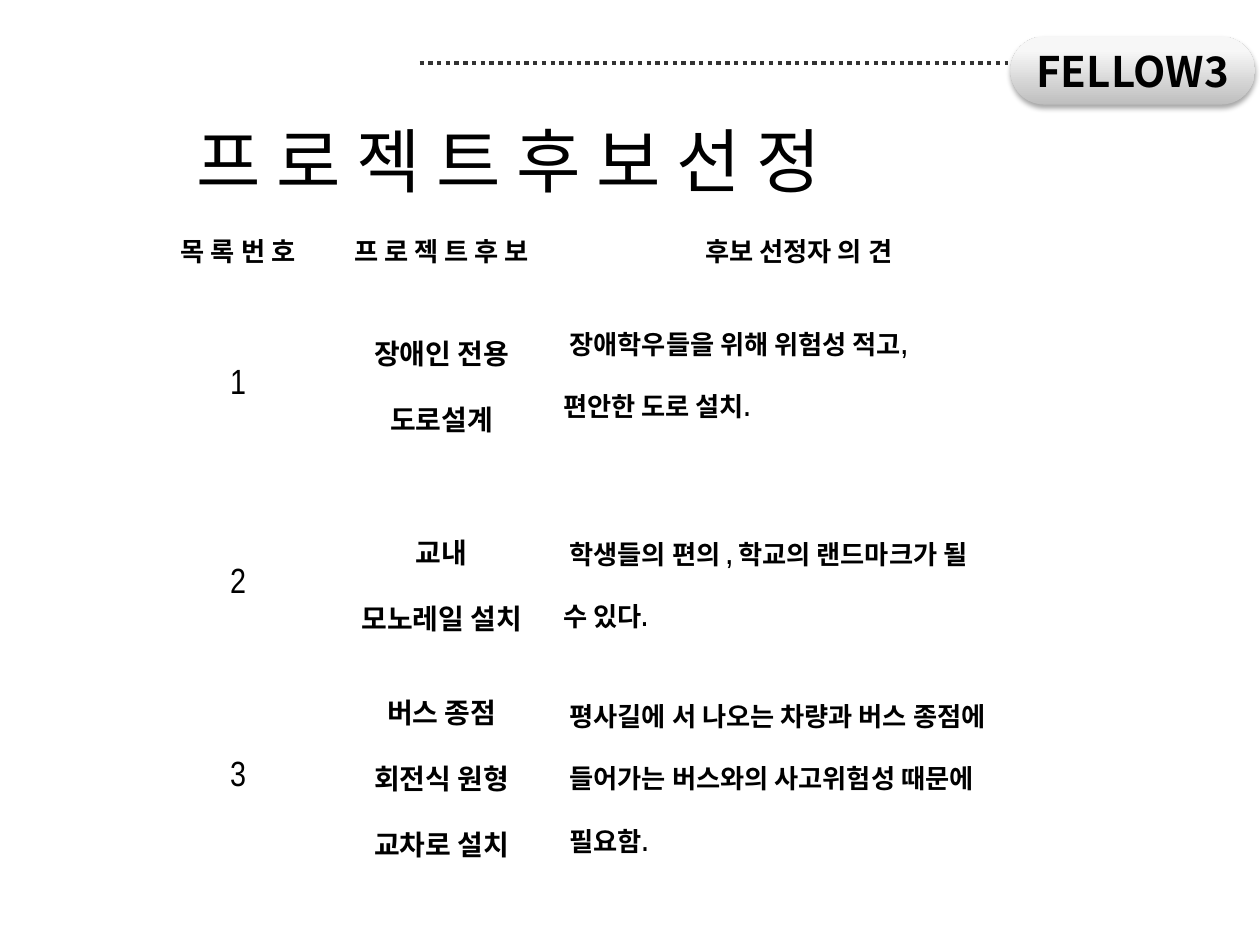
"""Build the project candidate selection slide with its table of reasons."""
from dataclasses import dataclass

from lxml import etree
from pptx import Presentation
from pptx.dml.color import RGBColor
from pptx.enum.dml import MSO_LINE
from pptx.enum.shapes import MSO_CONNECTOR, MSO_SHAPE
from pptx.enum.text import MSO_ANCHOR, PP_ALIGN
from pptx.oxml import parse_xml
from pptx.oxml.ns import nsdecls, qn
from pptx.util import Inches, Pt


@dataclass(frozen=True)
class Theme:
    black: RGBColor = RGBColor(0x00, 0x00, 0x00)
    dots: RGBColor = RGBColor(0x33, 0x33, 0x33)
    badge_low: RGBColor = RGBColor(0xBE, 0xBE, 0xBE)
    badge_high: RGBColor = RGBColor(0xF7, 0xF7, 0xF7)
    korean: str = "Noto Sans CJK KR"
    narrow: str = "Arial Narrow"
    title: int = 40
    badge: int = 24
    number: int = 20
    candidate: int = 16
    reason: int = 15


T = Theme()


def write(tf, lines, size, font, bold=False, align=PP_ALIGN.LEFT, gap=0):
    """Fill a text frame with equally spaced, equally styled paragraphs."""
    tf.text = "\n".join(lines)
    for i, p in enumerate(tf.paragraphs):
        p.alignment = align
        if i:
            p.space_before = Pt(gap)
        for r in p.runs:
            r.font.size, r.font.name, r.font.bold = Pt(size), font, bold
            r.font.color.rgb = T.black
            ea = etree.SubElement(r._r.get_or_add_rPr(), qn("a:ea"))
            ea.set("typeface", T.korean)


prs = Presentation()
prs.slide_width, prs.slide_height = Inches(10), Inches(7.5)
s = prs.slides.add_slide(prs.slide_layouts[6])

title = s.shapes.add_textbox(Inches(1.46), Inches(0.91), Inches(6.54), Inches(0.71))
title.text_frame.word_wrap = True
title.text_frame.vertical_anchor = MSO_ANCHOR.MIDDLE
write(title.text_frame, ["프 로 젝 트 후 보 선 정"], T.title, T.korean)

rule = s.shapes.add_connector(
    MSO_CONNECTOR.STRAIGHT, Inches(3.33), Inches(0.5), Inches(8), Inches(0.5))
rule.line.color.rgb = T.dots
rule.line.width = Pt(2.5)
rule.line.dash_style = MSO_LINE.ROUND_DOT
etree.SubElement(rule._element.spPr, qn("a:effectLst"))

header = ["목 록 번 호", "프 로 젝 트 후 보", "후보 선정자 의 견"]
candidates = [
    (["장애인 전용", "도로설계"],
     ["장애학우들을 위해 위험성 적고,", "편안한 도로 설치."], 1),
    (["교내", "모노레일 설치"],
     ["학생들의 편의 , 학교의 랜드마크가 될", "수 있다."], 1),
    (["버스 종점", "회전식 원형", "교차로 설치"],
     ["평사길에 서 나오는 차량과 버스 종점에",
      "들어가는 버스와의 사고위험성 때문에", "필요함."], 3),
]
widths = [1.5, 1.73, 3.94]
heights = [0.38, 1.8, 1.35, 1.72]
frame = s.shapes.add_table(
    len(heights), len(widths), Inches(1.14), Inches(1.78),
    Inches(sum(widths)), Inches(sum(heights)))
table = frame.table
table.first_row = table.horz_banding = False
for column, width in zip(table.columns, widths):
    column.width = Inches(width)
for row, height in zip(table.rows, heights):
    row.height = Inches(height)
for cell in table.iter_cells():
    cell.fill.background()
    cell.vertical_anchor = MSO_ANCHOR.MIDDLE

for col, label in enumerate(header):
    write(table.cell(0, col).text_frame, [label], T.reason, T.narrow, True, PP_ALIGN.CENTER)
for row, (names, reasons, indented) in enumerate(candidates, 1):
    number, name, reason = (table.cell(row, col) for col in range(3))
    write(number.text_frame, [str(row)], T.number, T.narrow, False, PP_ALIGN.CENTER)
    write(name.text_frame, names, T.candidate, T.narrow, True, PP_ALIGN.CENTER, 14.5)
    write(reason.text_frame, reasons, T.reason, T.narrow, True, PP_ALIGN.LEFT, 14)
    for p in reason.text_frame.paragraphs[:indented]:
        p._p.get_or_add_pPr().set("indent", str(Inches(0.05)))
table.cell(1, 2).margin_bottom = Inches(0.23)

badge = s.shapes.add_shape(
    MSO_SHAPE.ROUNDED_RECTANGLE, Inches(8.02), Inches(0.29), Inches(1.94), Inches(0.54))
badge.adjustments[0] = 0.5
badge.line.fill.background()
badge.fill.gradient()
badge.fill.gradient_angle = 90
stops = zip(badge.fill.gradient_stops, [(0, T.badge_low), (0.8, T.badge_high)])
for stop, (position, color) in stops:
    stop.position = position
    stop.color.rgb = color
badge._element.spPr.append(parse_xml(
    f'<a:effectLst {nsdecls("a")}><a:outerShdw blurRad="{Pt(3.1)}" dist="{Pt(1.8)}" '
    f'dir="5400000" rotWithShape="0"><a:srgbClr val="{T.black}">'
    '<a:alpha val="35000"/></a:srgbClr></a:outerShdw></a:effectLst>'))
badge.text_frame.word_wrap = False
badge.text_frame.vertical_anchor = MSO_ANCHOR.MIDDLE
write(badge.text_frame, ["FELLOW3"], T.badge, T.korean, True, PP_ALIGN.CENTER)

prs.save("out.pptx")
